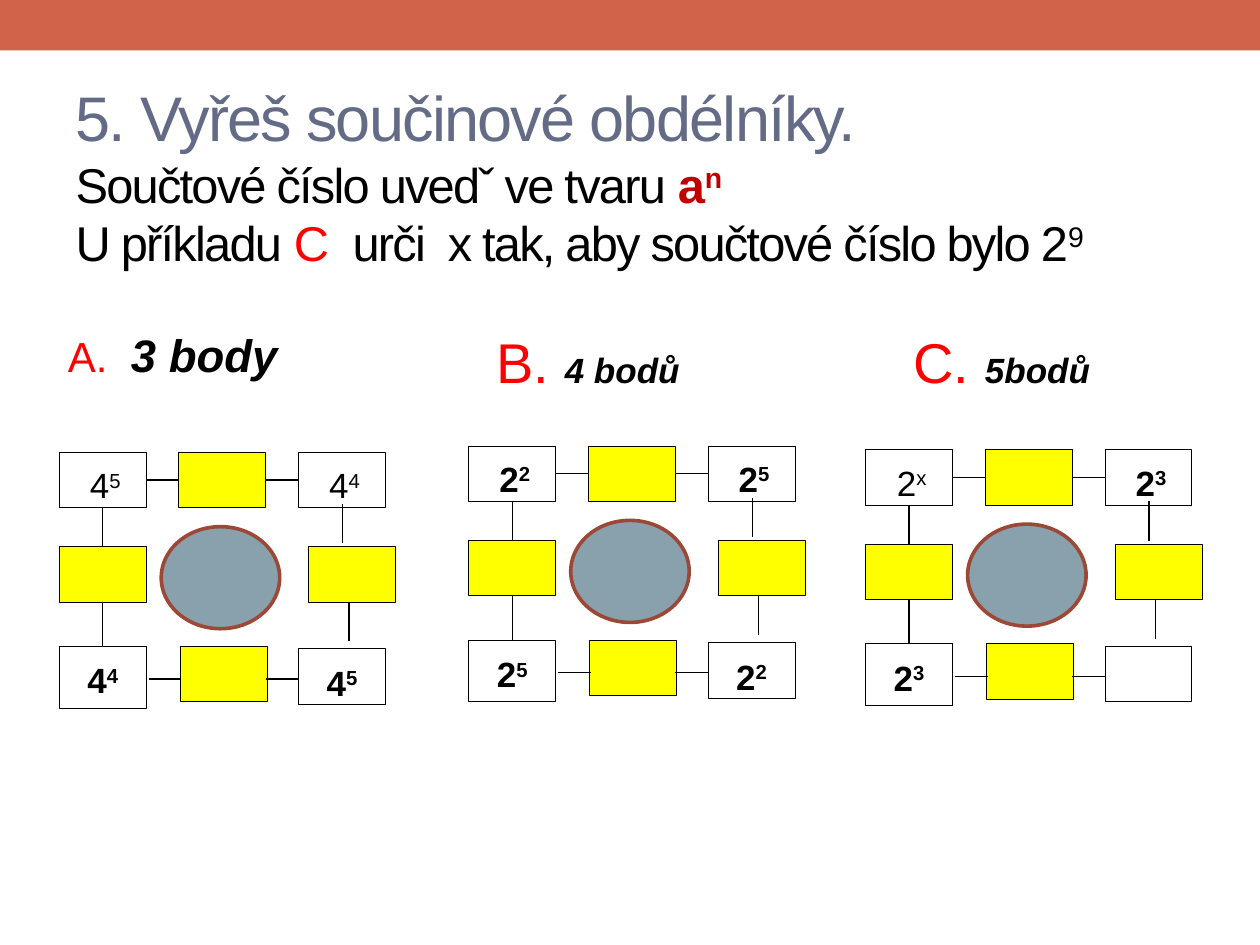
from lxml.etree import SubElement
from pptx import Presentation
from pptx.dml.color import RGBColor
from pptx.enum.shapes import MSO_CONNECTOR, MSO_SHAPE
from pptx.enum.text import MSO_ANCHOR, MSO_AUTO_SIZE, PP_ALIGN
from pptx.oxml.ns import qn
from pptx.util import Inches, Pt

COLORS = {
    "band": "D16349", "title": "646B86", "black": "000000", "white": "FFFFFF",
    "red": "FF0000", "dark_red": "C00000", "yellow": "FFFF00",
    "oval": "88A1AD", "oval_edge": "9B4936",
}
TOP, LEFT, BOTTOM, RIGHT = range(4)  # connection sites of a rectangle
CELL_W, CELL_H = 0.69, 0.44


def add_run(paragraph, text, size=20, color="black", bold=False, italic=False,
            raised=False, spacing=None):
    run = paragraph.add_run()
    run.text = text
    run.font.name = "Arial"
    run.font.size = Pt(size)
    run.font.bold = bold
    run.font.italic = italic
    run.font.color.rgb = RGBColor.from_string(COLORS[color])
    properties = run.font._element
    if raised:
        properties.set("baseline", "30000")
    if spacing is not None:
        properties.set("spc", str(spacing * 100))


class SlideBuilder:
    def __init__(self, slide):
        self.slide = slide
        self.shapes = slide.shapes

    def box(self, left, top, width, height, fill, line=None, line_width=0.5,
            kind=MSO_SHAPE.RECTANGLE):
        shape = self.shapes.add_shape(
            kind, Inches(left), Inches(top), Inches(width), Inches(height))
        shape.shadow.inherit = False
        shape.fill.solid()
        shape.fill.fore_color.rgb = RGBColor.from_string(COLORS[fill])
        if line:
            shape.line.color.rgb = RGBColor.from_string(COLORS[line])
            shape.line.width = Pt(line_width)
        else:
            shape.line.fill.background()
        return shape

    def line(self, x1=0, y1=0, x2=0, y2=0):
        connector = self.shapes.add_connector(
            MSO_CONNECTOR.STRAIGHT, Inches(x1), Inches(y1), Inches(x2), Inches(y2))
        connector.line.color.rgb = RGBColor.from_string(COLORS["black"])
        connector.line.width = Pt(0.75)
        SubElement(connector._element.spPr, qn("a:effectLst"))
        return connector

    def join(self, start, start_site, end, end_site):
        connector = self.line()
        connector.begin_connect(start, start_site)
        connector.end_connect(end, end_site)

    def power(self, cell, base, exponent, bold, tight):
        frame = cell.text_frame
        frame.vertical_anchor = MSO_ANCHOR.TOP
        if tight:
            frame.margin_left = frame.margin_top = frame.margin_bottom = Inches(0.04)
            frame.margin_right = 0
        paragraph = frame.paragraphs[0]
        paragraph.alignment = PP_ALIGN.CENTER
        paragraph.line_spacing = 1.15
        paragraph.space_after = Pt(10)
        add_run(paragraph, base, bold=bold)
        add_run(paragraph, exponent, bold=bold, raised=True)

    def title(self, lines):
        title = self.slide.shapes.title
        title.left, title.top = Inches(0.5), Inches(0.58)
        title.width, title.height = Inches(9), Inches(1.62)
        frame = title.text_frame
        frame.word_wrap = True
        frame.auto_size = MSO_AUTO_SIZE.NONE
        frame.vertical_anchor = MSO_ANCHOR.MIDDLE
        paragraph = frame.paragraphs[0]
        paragraph.alignment = PP_ALIGN.LEFT
        for number, runs in enumerate(lines):
            if number:
                paragraph.add_line_break()
            for text, style in runs:
                add_run(paragraph, text, **{"size": 27.9, "spacing": -1, **style})

    def label(self, left, width, letter, letter_size, points, points_size):
        textbox = self.shapes.add_textbox(
            Inches(left), Inches(2.55), Inches(width), Inches(0.66))
        textbox.text_frame.word_wrap = True
        paragraph = textbox.text_frame.paragraphs[0]
        paragraph.space_before = Pt(4)
        add_run(paragraph, letter, size=letter_size, color="red")
        add_run(paragraph, points, size=points_size, bold=True, italic=True)

    def product_rectangle(self, left, top, corners):
        self.shapes = self.slide.shapes.add_group_shape().shapes

        def cell(dx, dy, fill, height=CELL_H):
            return self.box(left + dx, top + dy, CELL_W, height, fill, "black")

        def loose_line(x1, y1, x2, y2):
            self.line(left + x1, top + y1, left + x2, top + y2)

        # Corner factors
        top_left = cell(0, 0, "white")
        top_right = cell(1.9, 0, "white")
        bottom_left = cell(0, 1.54, "white", 0.49)
        bottom_right = cell(1.9, 1.56, "white")
        corner_cells = (top_left, top_right, bottom_left, bottom_right)
        for corner, value in zip(corner_cells, corners):
            if value:
                self.power(corner, *value, tight=corner in (top_left, top_right))

        # Products to fill in
        top_product = cell(0.95, 0, "yellow")
        left_product = cell(0, 0.75, "yellow")
        cell(1.98, 0.75, "yellow")
        cell(0.96, 1.54, "yellow")

        # Links between the cells
        self.join(top_left, RIGHT, top_product, LEFT)
        self.join(top_product, RIGHT, top_right, LEFT)
        self.join(left_product, TOP, top_left, BOTTOM)
        self.join(bottom_left, TOP, left_product, BOTTOM)
        loose_line(0.71, 1.8, 0.97, 1.8)
        loose_line(1.64, 1.8, 1.9, 1.8)
        loose_line(2.25, 0.72, 2.25, 0.41)
        loose_line(2.3, 1.5, 2.3, 1.19)

        # Result in the centre
        self.box(left + 0.81, top + 0.59, 0.94, 0.81, "oval", "oval_edge", 2.08,
                 MSO_SHAPE.OVAL)
        self.shapes = self.slide.shapes


def main():
    presentation = Presentation()
    presentation.slide_width, presentation.slide_height = Inches(10), Inches(7.5)
    builder = SlideBuilder(
        presentation.slides.add_slide(presentation.slide_layouts[5]))

    # Band and heading
    builder.box(0, 0, 10, 0.4, "band")
    builder.title([
        [("5. Vyřeš součinové obdélníky.", {"size": 36, "color": "title"})],
        [("Součtové číslo uvedˇ ve tvaru ", {}),
         ("a", {"color": "dark_red", "bold": True}),
         ("n", {"color": "dark_red", "bold": True, "raised": True})],
        [("U příkladu ", {}), ("C", {"color": "red"}),
         ("  urči  x tak, aby součtové číslo bylo 2", {}),
         ("9", {"raised": True})],
    ])

    # Exercises: corners as (base, exponent, bold), row by row
    builder.product_rectangle(3.72, 3.54, [
        ("2", "2", True), ("2", "5", True), ("2", "5", True), ("2", "2", True)])
    builder.product_rectangle(6.87, 3.57, [
        ("2", "x", False), ("2", "3", True), ("2", "3", True), None])
    builder.product_rectangle(0.47, 3.59, [
        ("4", "5", False), ("4", "4", False), ("4", "4", True), ("4", "5", True)])

    # Exercise labels with their points
    builder.label(0.44, 2.18, "A.  ", 24, "3 body", 26)
    builder.label(3.84, 1.78, "B. ", 32, "4 bodů", 20)
    builder.label(7.15, 1.93, "C. ", 32, "5bodů", 20)

    presentation.save("out.pptx")


if __name__ == "__main__":
    main()
